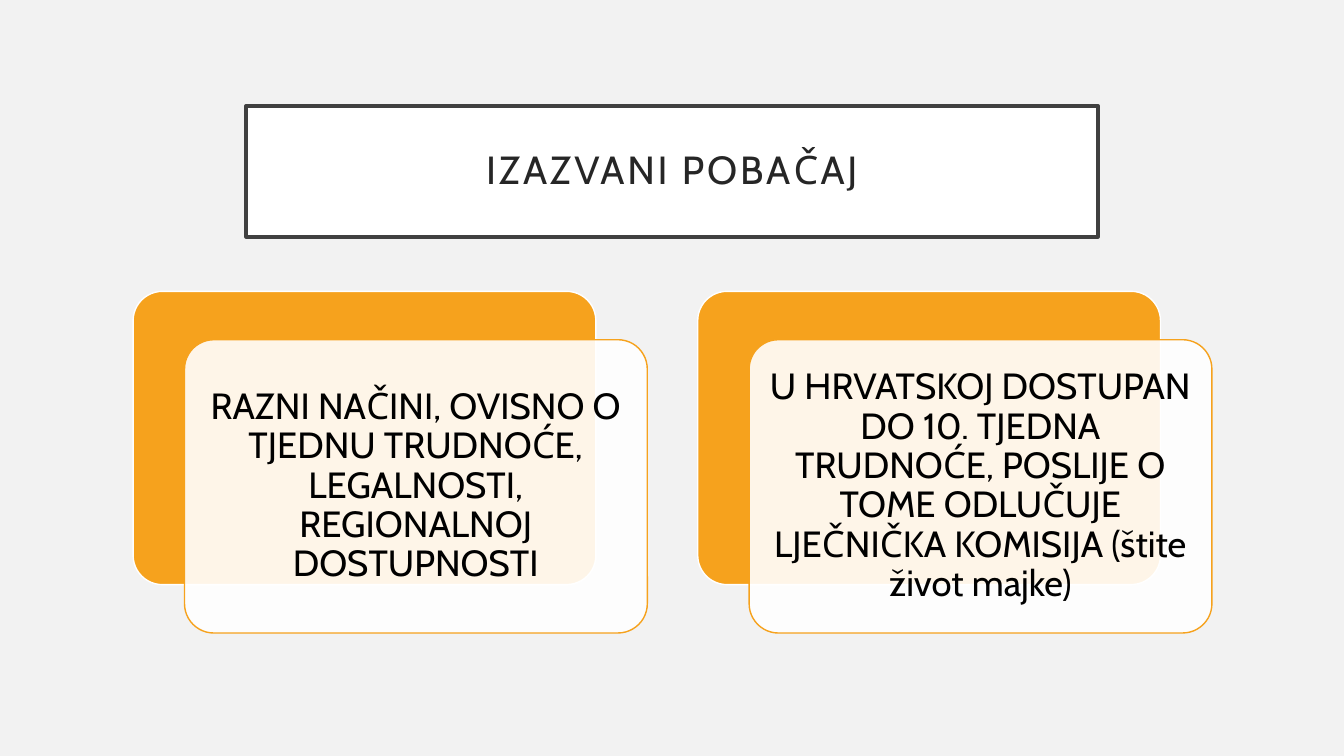
"""Build a slide with a framed title and two layered text cards."""
import pptx
import pptx.dml.color
import pptx.enum.shapes
import pptx.enum.text
import pptx.util
from lxml import etree

Inches = pptx.util.Inches
Pt = pptx.util.Pt
KINDS = pptx.enum.shapes.MSO_SHAPE

TITLE = "IZAZVANI POBAČAJ"
CARDS = [
    "RAZNI NAČINI, OVISNO O TJEDNU TRUDNOĆE, LEGALNOSTI, REGIONALNOJ DOSTUPNOSTI",
    "U HRVATSKOJ DOSTUPAN DO 10. TJEDNA TRUDNOĆE, POSLIJE O TOME ODLUČUJE "
    "LJEČNIČKA KOMISIJA (štite život majke)",
]
FONT = "Cabin"
ORANGE, WHITE = "F6A21D", "FFFFFF"
LEFT, TOP, WIDE, HIGH = 1.32, 2.89, 4.59, 2.91
STEP, SHIFT, DROP = 5.6, 0.51, 0.48


def color(code):
    return pptx.dml.color.RGBColor.from_string(code)


def box(slide, kind, at, fill, line, width):
    shape = slide.shapes.add_shape(kind, *map(Inches, at))
    shape.shadow.inherit = False
    shape.fill.solid()
    shape.fill.fore_color.rgb = color(fill)
    shape.line.color.rgb = color(line)
    shape.line.width = Pt(width)
    if kind == KINDS.ROUNDED_RECTANGLE:
        shape.adjustments[0] = 0.1
    return shape


def fade(shape, share):
    tint = shape.fill._xPr.find(".//" + pptx.oxml.ns.qn("a:srgbClr"))
    etree.SubElement(tint, pptx.oxml.ns.qn("a:alpha"), val=str(share * 1000))


def write(shape, text, size, ink, inset, track=0):
    frame = shape.text_frame
    frame.word_wrap = True
    frame.vertical_anchor = pptx.enum.text.MSO_ANCHOR.MIDDLE
    frame.margin_left = frame.margin_right = Inches(inset)
    frame.margin_top = frame.margin_bottom = Inches(inset)
    para = frame.paragraphs[0]
    para.alignment = pptx.enum.text.PP_ALIGN.CENTER
    para.line_spacing = 0.9
    run = para.add_run()
    run.text = text
    run.font.name = FONT
    run.font.size = Pt(size)
    run.font.color.rgb = color(ink)
    if track:
        run.font._element.set("spc", str(track * 100))


def main():
    deck = pptx.Presentation()
    deck.slide_width, deck.slide_height = Inches(13.33), Inches(7.5)
    slide = deck.slides.add_slide(deck.slide_layouts[6])
    slide.background.fill.solid()
    slide.background.fill.fore_color.rgb = color("F2F2F2")

    title = box(slide, KINDS.RECTANGLE, (2.44, 1.05, 8.45, 1.3), WHITE, "404040", 2.5)
    write(title, TITLE, 28, "262626", 0.2, track=2)

    for i, text in enumerate(CARDS):
        x = LEFT + i * STEP
        box(slide, KINDS.ROUNDED_RECTANGLE, (x, TOP, WIDE, HIGH), ORANGE, WHITE, 1)
        card = box(slide, KINDS.ROUNDED_RECTANGLE,
                   (x + SHIFT, TOP + DROP, WIDE, HIGH), WHITE, ORANGE, 1)
        fade(card, 90)
        write(card, text, 26, "000000", 0.11)

    deck.save("out.pptx")


if __name__ == "__main__":
    main()
